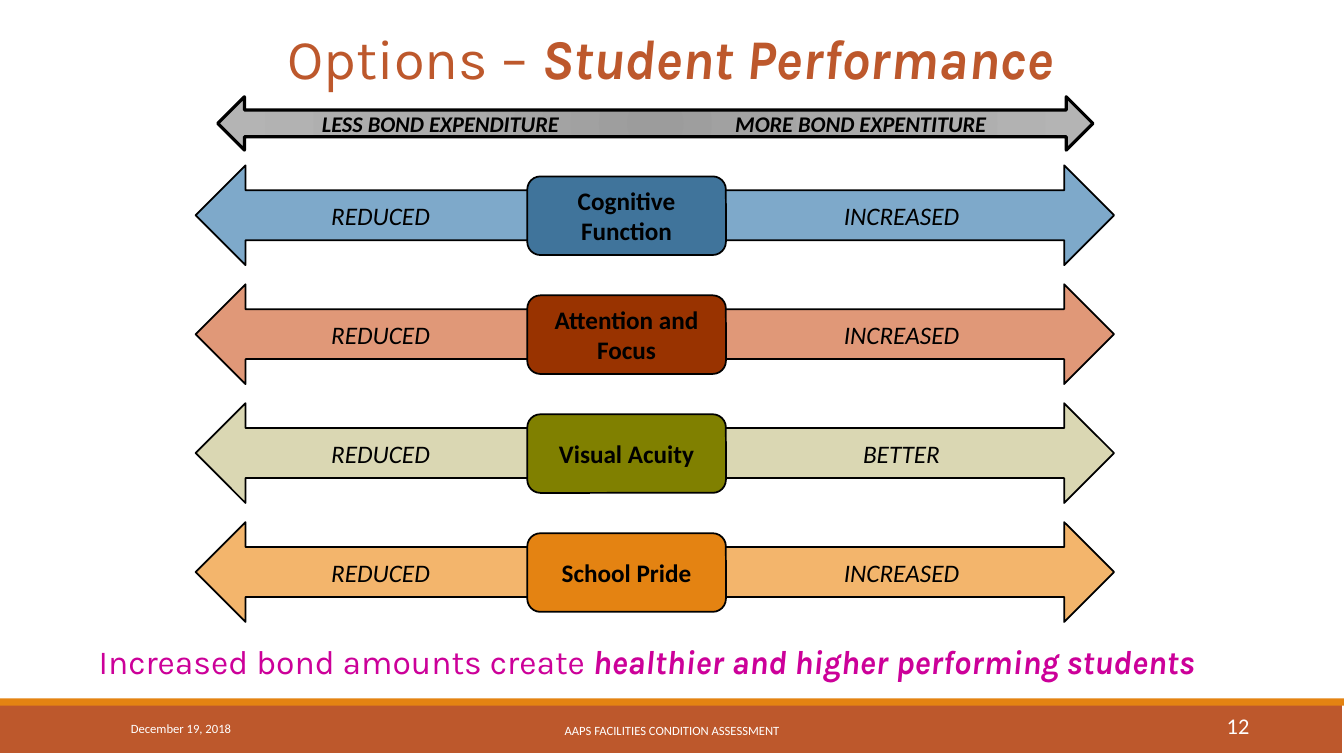
from pptx import Presentation
from pptx import util as u
from pptx.dml.color import RGBColor
from pptx.enum import shapes, text
from pptx.oxml import parse_xml
from pptx.oxml.ns import nsdecls

LEFT, CENTER, RIGHT = text.PP_ALIGN.LEFT, text.PP_ALIGN.CENTER, text.PP_ALIGN.RIGHT
MIDDLE, TOP = text.MSO_ANCHOR.MIDDLE, text.MSO_ANCHOR.TOP
KIND = shapes.MSO_SHAPE

BANDS = [((-0.02, 6.97, 13.33, 0.5), "BD582C"), ((0, 6.93, 13.33, 0.07), "E48312")]

LABELS = [
    ((0.15, 0.22, 13, 0.8), [("Options – ", ""), ("Student Performance", "bi")],
     "Karla", 40, "BD582C", CENTER, MIDDLE, 0.85),
    ((1.2, 7.03, 2.7, 0.4), [("December 19, 2018", "")],
     "Calibri", 9, "FFFFFF", LEFT, MIDDLE, 1),
    ((4.03, 7.05, 5.27, 0.4), [("AAPS FACILITIES CONDITION ASSESSMENT", "")],
     "Calibri", 9, "FFFFFF", CENTER, MIDDLE, 1),
    ((11.06, 7, 1.43, 0.4), [("12", "")], "Calibri", 16, "FFFFFF", RIGHT, MIDDLE, 1),
    ((0.88, 6.31, 11.97, 0.5),
     [("Increased bond amounts create", ""), (" healthier and higher performing students", "bi")],
     "Karla", 24, "CC0099", LEFT, TOP, 1),
]

ROWS = [
    ("Cognitive Function", "REDUCED", "INCREASED", "40749B", "7EA9CA"),
    ("Attention and Focus", "REDUCED", "INCREASED", "993300", "E09878"),
    ("Visual Acuity", "REDUCED", "BETTER", "808000", "DAD7B3"),
    ("School Pride", "REDUCED", "INCREASED", "E48312", "F3B56C"),
]
ROW_TOP, ROW_PITCH, ARROW_H = 1.64, 1.18, 0.99
BOX_DROP, BOX_H = 0.11, 0.78

SCALE = "LESS BOND EXPENDITURE\tMORE BOND EXPENTITURE"
SCALE_AT = (2.16, 0.96, 8.68, 0.53)
SCALE_INDENT, SCALE_TAB = 0.9, 4.1
SCALE_STOPS = [(0, "9C9C9C"), (45, "AAAAAA"), (100, "B4B4B4")]


def color(hex_value):
    return RGBColor.from_string(hex_value)


def write(sp, runs, font, size, ink, align, anchor=MIDDLE, spacing=1):
    tf = sp.text_frame
    tf.word_wrap = True
    tf.vertical_anchor = anchor
    p = tf.paragraphs[0]
    p.alignment = align
    p.line_spacing = spacing
    for words, style in runs:
        r = p.add_run()
        r.text = words
        r.font.name = font
        r.font.size = u.Pt(size)
        r.font.bold = "b" in style
        r.font.italic = "i" in style
        r.font.color.rgb = color(ink)
    return p


def add_shape(s, kind, at, fill, line=0):
    sp = s.shapes.add_shape(kind, *map(u.Inches, at))
    sp.shadow.inherit = False
    sp.fill.solid()
    sp.fill.fore_color.rgb = color(fill)
    if line:
        sp.line.color.rgb = color("000000")
        sp.line.width = u.Pt(line)
    else:
        sp.line.fill.background()
    return sp


def add_scale(s):
    sp = add_shape(s, KIND.LEFT_RIGHT_ARROW, SCALE_AT, SCALE_STOPS[0][1], 2.25)
    stops = "".join(f'<a:gs pos="{pos * 1000}"><a:srgbClr val="{c}"/></a:gs>'
                    for pos, c in SCALE_STOPS)
    solid = sp.fill._xPr.solidFill if hasattr(sp.fill._xPr, "solidFill") else sp.fill._xPr.eg_fillProperties
    solid.getparent().replace(solid, parse_xml(
        f'<a:gradFill {nsdecls("a")} rotWithShape="1"><a:gsLst>{stops}</a:gsLst>'
        '<a:path path="circle"><a:fillToRect l="100000" t="100000" r="100000" b="100000"/>'
        '</a:path></a:gradFill>'))
    sp.text_frame.margin_left = u.Inches(SCALE_INDENT)
    p = sp.text_frame.paragraphs[0]
    p._p.get_or_add_pPr().append(parse_xml(
        f'<a:tabLst {nsdecls("a")}><a:tab pos="{u.Inches(SCALE_TAB)}" algn="l"/></a:tabLst>'))
    write(sp, [(SCALE, "bi")], "Calibri", 16, "000000", LEFT)


def main():
    prs = Presentation()
    prs.slide_width, prs.slide_height = u.Inches(13.33), u.Inches(7.5)
    s = prs.slides.add_slide(prs.slide_layouts[6])
    for at, fill in BANDS:
        add_shape(s, KIND.RECTANGLE, at, fill)
    for at, runs, *style in LABELS:
        write(s.shapes.add_textbox(*map(u.Inches, at)), runs, *style)
    for i, (topic, less, more, dark, light) in enumerate(ROWS):
        top = ROW_TOP + i * ROW_PITCH
        parts = [
            (KIND.LEFT_ARROW, (1.94, top, 3.42, ARROW_H), light, less, "i"),
            (KIND.RIGHT_ARROW, (7.08, top, 3.97, ARROW_H), light, more, "i"),
            (KIND.ROUNDED_RECTANGLE, (5.23, top + BOX_DROP, 1.97, BOX_H), dark, topic, "b"),
        ]
        for kind, at, fill, words, style in parts:
            sp = add_shape(s, kind, at, fill, 1.25)
            write(sp, [(words, style)], "Calibri", 18, "000000", CENTER)
    add_scale(s)
    prs.save("out.pptx")


if __name__ == "__main__":
    main()
